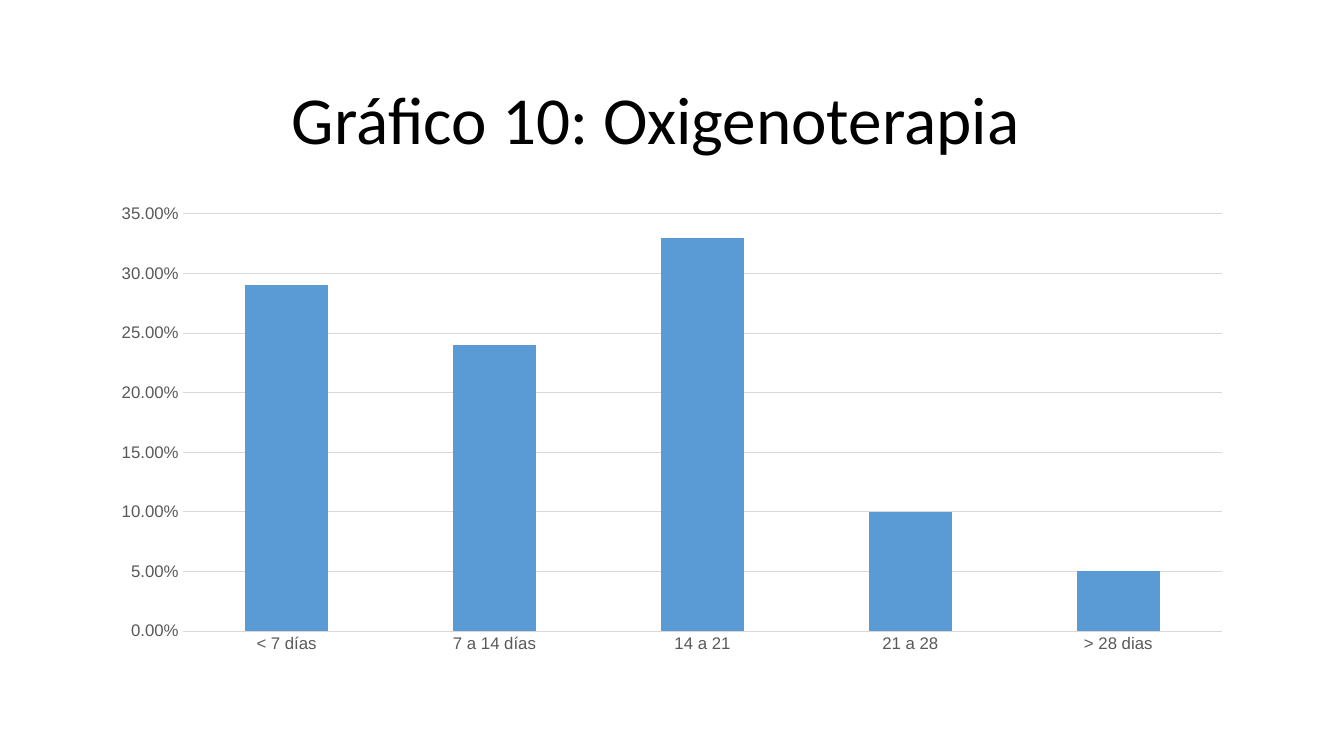
from dataclasses import dataclass

import pptx
import pptx.chart.data
import pptx.dml.color
import pptx.enum.chart
import pptx.enum.text
import pptx.util
from pptx.util import Inches

RGBColor = pptx.dml.color.RGBColor
BLACK = RGBColor(0x00, 0x00, 0x00)
GRAY = RGBColor(0x59, 0x59, 0x59)
LIGHT_GRAY = RGBColor(0xD9, 0xD9, 0xD9)
BLUE = RGBColor(0x5B, 0x9B, 0xD5)


@dataclass
class Bar:
    label: str
    share: float


BARS = [
    Bar("< 7 días", 0.29),
    Bar("7 a 14 días", 0.24),
    Bar("14 a 21", 0.33),
    Bar("21 a 28", 0.1),
    Bar("> 28 dias", 0.05),
]


def format_font(font, *, size: float, color: RGBColor, name: str) -> None:
    font.size = pptx.util.Pt(size)
    font.name = name
    font.color.rgb = color


def add_text(tf, text: str, *, size: float, color: RGBColor, name: str,
             align=pptx.enum.text.PP_ALIGN.CENTER, spacing: float = 0.9) -> None:
    p = tf.paragraphs[0]
    p.alignment = align
    p.line_spacing = spacing
    r = p.add_run()
    r.text = text
    format_font(r.font, size=size, color=color, name=name)


def format_line(line) -> None:
    line.color.rgb = LIGHT_GRAY
    line.width = pptx.util.Pt(0.75)


def add_title(s, text: str) -> None:
    sp = s.shapes.title
    sp.left, sp.top = Inches(1.19), Inches(0.75)
    sp.width, sp.height = Inches(10.93), Inches(0.94)
    tf = sp.text_frame
    tf.word_wrap = True
    tf.auto_size = pptx.enum.text.MSO_AUTO_SIZE.NONE
    tf.vertical_anchor = pptx.enum.text.MSO_ANCHOR.MIDDLE
    tf.margin_right = Inches(0.4)
    add_text(tf, text, size=48, color=BLACK, name="Calibri")


def add_bar_chart(s, bars: list[Bar]) -> None:
    data = pptx.chart.data.CategoryChartData(number_format="0.00%")
    data.categories = [bar.label for bar in bars]
    data.add_series("Series 1", [bar.share for bar in bars])
    chart = s.shapes.add_chart(
        pptx.enum.chart.XL_CHART_TYPE.COLUMN_STACKED,
        Inches(0.98), Inches(1.94), Inches(11.37), Inches(4.63), data).chart
    chart.has_title = False
    chart.has_legend = False
    format_font(chart.font, size=12, color=BLACK, name="Arial")

    # Columns
    plot = chart.plots[0]
    plot.gap_width = 150
    plot.overlap = 100
    plot.vary_by_categories = False
    fill = plot.series[0].format.fill
    fill.solid()
    fill.fore_color.rgb = BLUE

    # Axes and gridlines
    for axis in (chart.category_axis, chart.value_axis):
        axis.major_tick_mark = pptx.enum.chart.XL_TICK_MARK.NONE
        axis.minor_tick_mark = pptx.enum.chart.XL_TICK_MARK.NONE
        format_font(axis.tick_labels.font, size=12, color=GRAY, name="Arial")
    format_line(chart.category_axis.format.line)
    values = chart.value_axis
    values.minimum_scale, values.maximum_scale, values.major_unit = 0, 0.35, 0.05
    values.tick_labels.number_format = "0.00%"
    values.tick_labels.number_format_is_linked = False
    values.format.line.fill.background()
    values.has_major_gridlines = True
    format_line(values.major_gridlines.format.line)


def main() -> None:
    prs = pptx.Presentation()
    prs.slide_width, prs.slide_height = Inches(13.33), Inches(7.5)
    s = prs.slides.add_slide(prs.slide_layouts[5])
    add_title(s, "Gráfico 10: Oxigenoterapia")
    add_bar_chart(s, BARS)
    prs.save("out.pptx")


if __name__ == "__main__":
    main()
